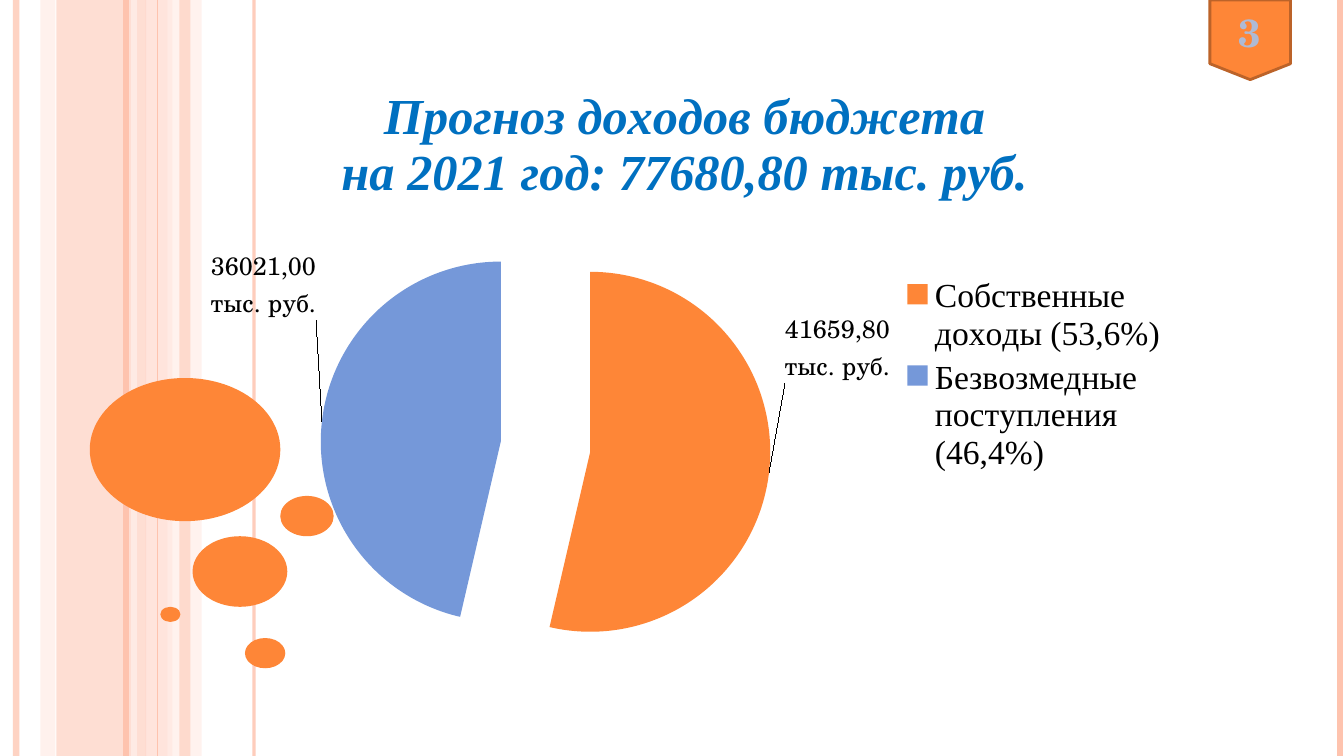
from lxml.etree import SubElement
from pptx import Presentation
from pptx.chart.data import CategoryChartData
from pptx.dml.color import RGBColor
from pptx.enum.chart import XL_CHART_TYPE as ChartType, XL_LABEL_POSITION as LabelPos
from pptx.enum.chart import XL_LEGEND_POSITION as LegendPos
from pptx.enum.shapes import MSO_CONNECTOR as Connector, MSO_SHAPE as Shape
from pptx.enum.text import MSO_ANCHOR as Anchor, PP_ALIGN as Align
from pptx.oxml import parse_xml
from pptx.oxml.ns import nsdecls, qn
from pptx.util import Inches, Pt

WIDTH, HEIGHT = 13.33, 7.5
COLORS = {"orange": "FE8637", "rust": "BC6329", "blue": "7598D9", "peach": "FEC3AE",
          "pink": "FFD9CE", "pale": "FFEDE8", "title": "0070C0", "number": "AEBAD5",
          "black": "000000", "white": "FFFFFF"}
SERIF, SCHOOL = "Times New Roman", "TeX Gyre Schola"


def rgb(name):
    return RGBColor.from_string(COLORS[name])


def set_alpha(fill_owner, percent):
    if percent < 100:
        color = next(fill_owner.iter(qn("a:srgbClr")))
        SubElement(color, qn("a:alpha")).set("val", str(percent * 1000))


def style_font(font, name, size, color, bold=False, italic=False):
    font.name, font.size = name, Pt(size)
    font.bold, font.italic = bold, italic
    font.color.rgb = rgb(color)


def manual_layout(x, y, w=None, h=None, edge=True, inner=False):
    parts = '<c:layoutTarget val="inner"/>' if inner else ""
    if edge:
        parts += '<c:xMode val="edge"/><c:yMode val="edge"/>'
    for tag, value in zip("xywh", (x, y, w, h)):
        if value is not None:
            parts += f'<c:{tag} val="{value}"/>'
    return parse_xml(f'<c:layout {nsdecls("c")}><c:manualLayout>{parts}'
                     '</c:manualLayout></c:layout>')


def place(parent, layout, after=None):
    """Put a layout into a chart part, replacing the one it has."""
    for old in parent.findall(qn("c:layout")):
        parent.remove(old)
    if after is None:
        parent.insert(0, layout)
    else:
        parent.find(qn(after)).addnext(layout)


class BudgetSlide:
    def __init__(self, deck):
        self.slide = deck.slides.add_slide(deck.slide_layouts[6])
        self.shapes = self.slide.shapes

    def shape(self, kind, x, y, w, h, color, alpha=100, outline=None):
        item = self.shapes.add_shape(kind, Inches(x), Inches(y), Inches(w), Inches(h))
        item.shadow.inherit = False
        item.fill.solid()
        item.fill.fore_color.rgb = rgb(color)
        set_alpha(item.fill._xPr, alpha)
        if outline:
            item.line.color.rgb = rgb(outline)
            item.line.width = Pt(2)
        else:
            item.line.fill.background()
        return item

    def stripe(self, x, width, color, alpha=100):
        line = self.shapes.add_connector(Connector.STRAIGHT, Inches(x), 0,
                                         Inches(x), Inches(HEIGHT))
        line.line.color.rgb = rgb(color)
        line.line.width = Pt(width)
        properties = line._element.spPr
        set_alpha(properties, alpha)
        SubElement(properties, qn("a:effectLst"))

    def page_number(self, number):
        badge = self.shape(Shape.FLOWCHART_OFFPAGE_CONNECTOR, 12, 0, 0.8, 0.79,
                           "orange", outline="rust")
        frame = badge.text_frame
        frame.text = number
        frame.vertical_anchor = Anchor.MIDDLE
        frame.margin_left = frame.margin_right = 0
        frame.paragraphs[0].alignment = Align.CENTER
        run = frame.paragraphs[0].runs[0]
        style_font(run.font, SCHOOL, 28, "number", bold=True)
        run.font._element.insert(0, parse_xml(
            f'<a:ln {nsdecls("a")} w="9525"><a:solidFill>'
            f'<a:srgbClr val="{COLORS["white"]}"/></a:solidFill></a:ln>'))

    def pie(self, title_lines, incomes):
        data = CategoryChartData(number_format="0.00")
        data.categories = [income[0] for income in incomes]
        data.add_series("Series 1", [income[1] for income in incomes])
        chart = self.shapes.add_chart(ChartType.PIE, Inches(1.89), Inches(0.65),
                                      Inches(9.78), Inches(6.2), data).chart
        style_font(chart.font, SCHOOL, 18, "black")

        # Title
        title = chart.chart_title
        title.include_in_layout = False
        title.text_frame.text = "\n".join(title_lines)
        for paragraph in title.text_frame.paragraphs:
            paragraph.alignment = Align.LEFT
            style_font(paragraph.runs[0].font, SERIF, 36, "title", True, True)
        place(title._element, manual_layout(0.15, 0.03), "c:tx")

        # Legend
        chart.has_legend = True
        chart.legend.position = LegendPos.RIGHT
        chart.legend.include_in_layout = False
        style_font(chart.legend.font, SERIF, 24, "black")
        place(chart.legend._element, manual_layout(0.72, 0.33, 0.27, 0.33), "c:legendPos")

        # Slices and their labels
        plot = chart.plots[0]
        plot.vary_by_categories = True
        place(next(chart.element.iter(qn("c:plotArea"))),
              manual_layout(0.13, 0.25, 0.46, 0.72, inner=True))
        series = plot.series[0]
        labels = series.data_labels
        labels.show_value = True
        labels.number_format, labels.number_format_is_linked = "0.00", False
        labels.position = LabelPos.OUTSIDE_END
        style_font(labels.font, SCHOOL, 18, "black")
        for index, (_, _, text, color, shift) in enumerate(incomes):
            point = series.points[index]
            point.format.fill.solid()
            point.format.fill.fore_color.rgb = rgb(color)
            label = point.data_label
            label.text_frame.text = text
            for paragraph in label.text_frame.paragraphs:
                style_font(paragraph.runs[0].font, SCHOOL, 18, "black")
            label.position = LabelPos.OUTSIDE_END
            place(label._get_or_add_dLbl(), manual_layout(*shift, edge=False), "c:idx")
        leader = labels._element.find(qn("c:showLeaderLines"))
        if leader is None:
            leader = SubElement(labels._element, qn("c:showLeaderLines"))
        leader.set("val", "1")
        series._element.find(qn("c:dPt")).addprevious(
            parse_xml(f'<c:explosion {nsdecls("c")} val="25"/>'))


def main():
    deck = Presentation()
    deck.slide_width, deck.slide_height = Inches(WIDTH), Inches(HEIGHT)
    page = BudgetSlide(deck)

    # Striped left edge: bands, lines, then the narrow band on top
    for x, width, color, alpha in [(0.56, 0.89, "peach", 54), (0.4, 0.15, "pink", 36),
                                   (1.44, 0.27, "pink", 70), (1.66, 0.34, "pale", 71)]:
        page.shape(Shape.RECTANGLE, x, 0, width, HEIGHT, color, alpha)
    for stripe in [(0.16, 4.5, "peach", 73), (1.33, 4.5, "pale", 83), (1.25, 4.5, "peach"),
                   (2.52, 2.25, "peach", 82), (1.56, 0.75, "peach"), (13.29, 4.5, "peach")]:
        page.stripe(*stripe)
    page.shape(Shape.RECTANGLE, 1.78, 0, 0.11, HEIGHT, "peach", 51)

    # Bubbles
    for bubble in [(0.89, 3.75, 1.89, 1.42), (1.91, 5.32, 0.94, 0.7), (1.59, 6.02, 0.2, 0.15),
                   (2.43, 6.33, 0.4, 0.3), (2.78, 4.92, 0.53, 0.4)]:
        page.shape(Shape.OVAL, *bubble, "orange")

    page.page_number("3")
    page.pie(["Прогноз доходов бюджета", "на 2021 год: 77680,80 тыс. руб."],
             [("Собственные доходы (53,6%)", 41659.8, "41659,80\nтыс. руб.",
               "orange", (0.01, -0.26)),
              ("Безвозмедные поступления (46,4%)", 36021, "36021,00\nтыс. руб.",
               "blue", (0, -0.16))])
    deck.save("out.pptx")


if __name__ == "__main__":
    main()
